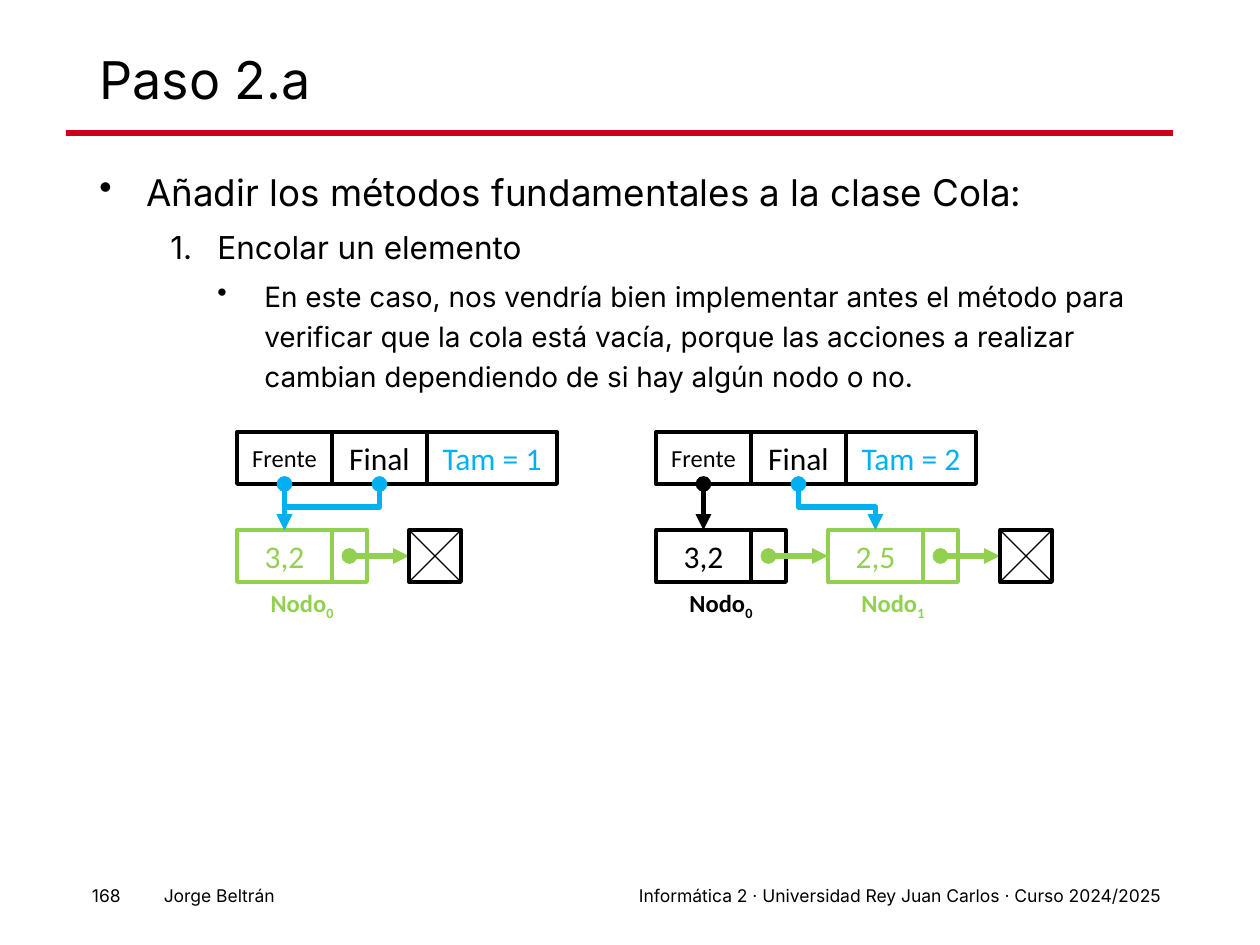
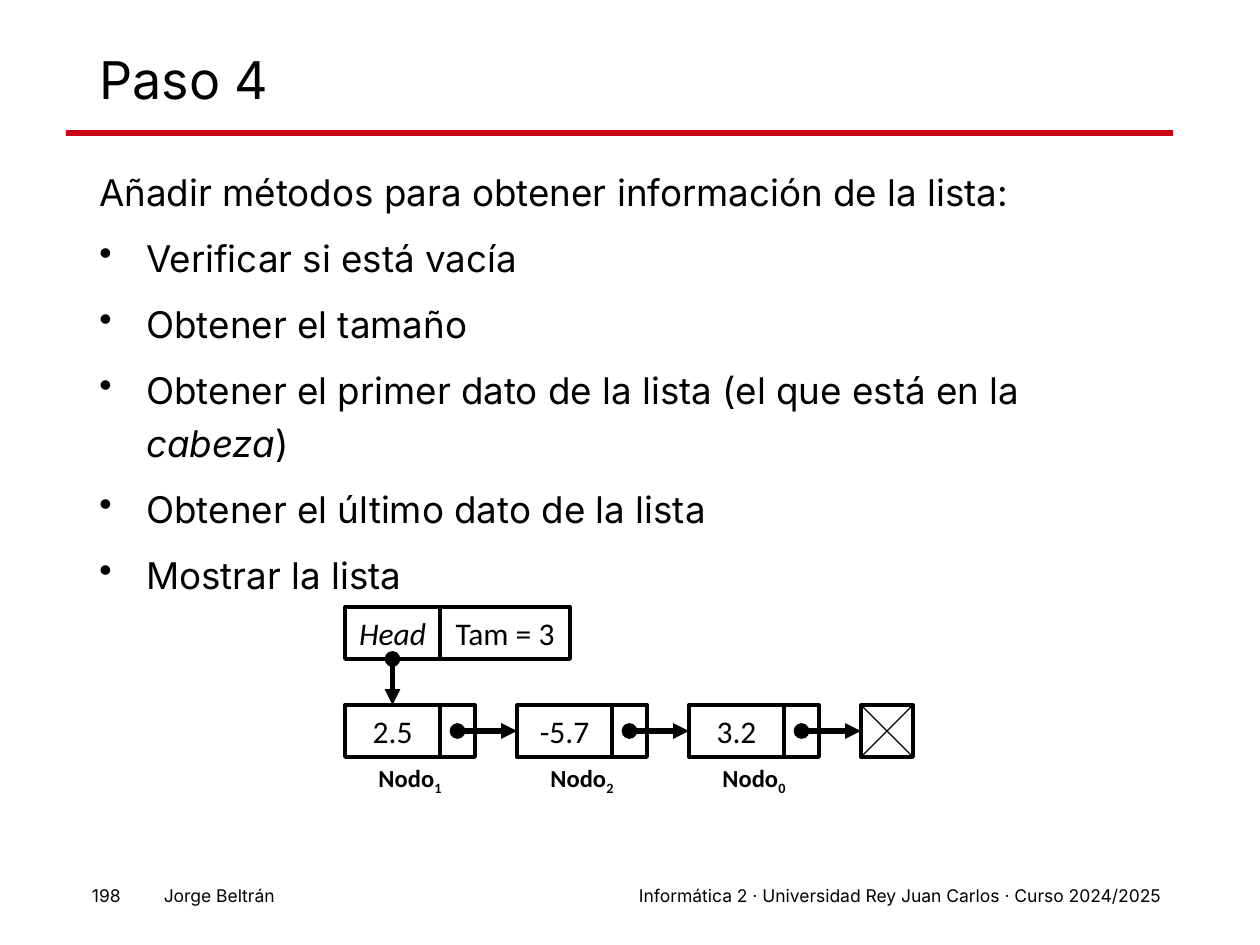
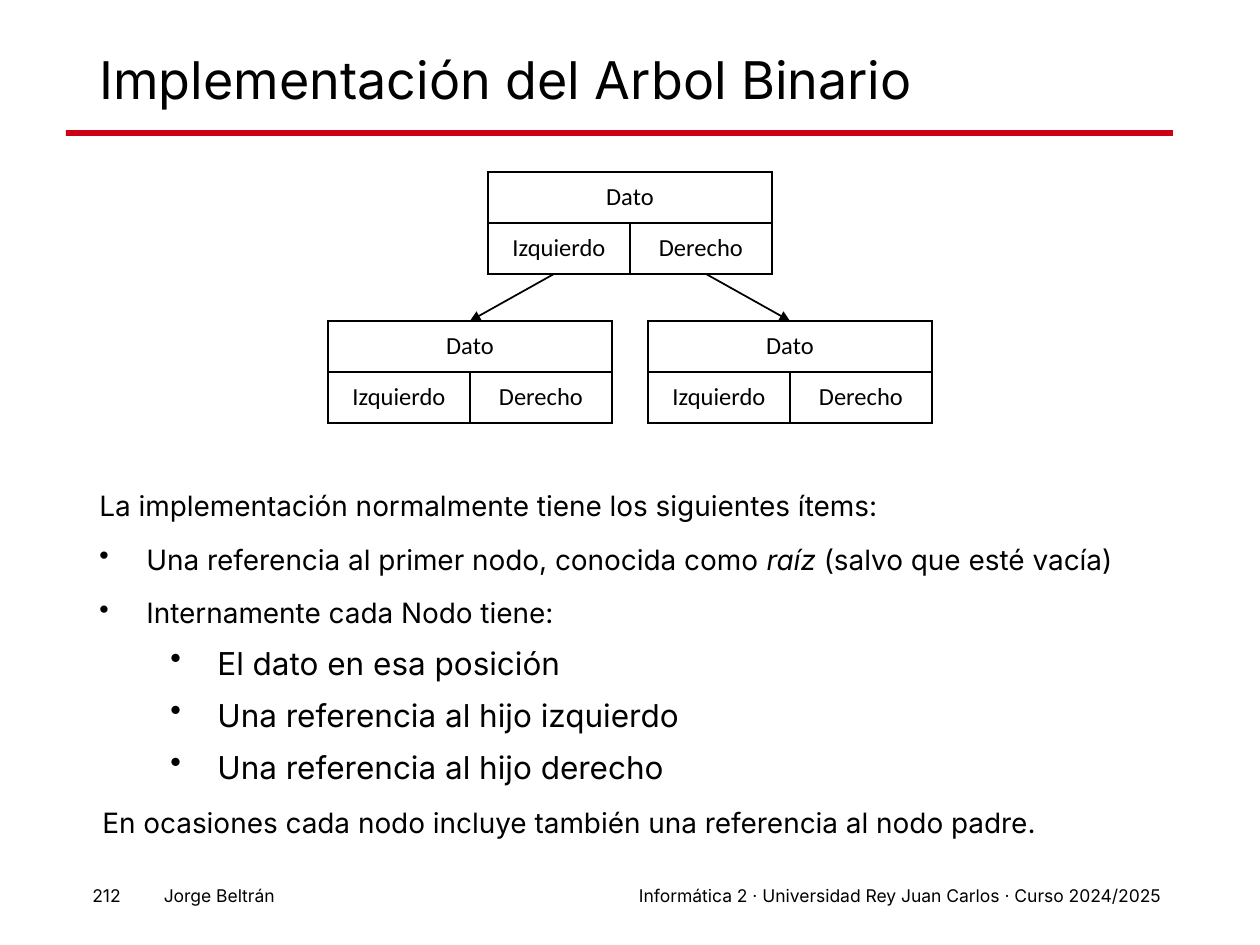
from lxml import etree
from pptx import Presentation
from pptx import util as u
from pptx.dml.color import RGBColor
from pptx.enum import shapes, text
from pptx.oxml.ns import qn

PX = 914400 / 126
COLORS = {"ink": "000000", "band": "CB0017", "new": "92D050", "changed": "00B0F0"}
AUTHOR = "Jorge Beltrán"
COURSE = "Informática 2 · Universidad Rey Juan Carlos · Curso 2024/2025"

# Font formats
TITLE = {"name": "Inter", "size": u.Pt(29.7)}
BODY = {"name": "Inter", "size": u.Pt(21)}
FOOTER = {"name": "Inter", "size": u.Pt(10)}
CELL = {"name": "Calibri", "size": u.Pt(18)}
SMALL = {"name": "Calibri", "size": u.Pt(14)}
LABEL = {**SMALL, "bold": True}
SIZE_18, SIZE_16 = {"size": u.Pt(18)}, {"size": u.Pt(16)}
ITALIC = {"italic": True}

# Body levels: left margin and hanging indent in px, space before in points
LEVELS = {
    "plain": (0, 0, 7.5),
    "closing": (0, 3, 7.5),
    "first": (47, -47, 7.5),
    "second": (118, -47, 3.8),
    "third": (165, -47, 3.8),
}

# Linked list measures in px
FIELD_W, LINK_W, FIELD_H = 95, 35, 52
NODE_W = FIELD_W + LINK_W
NODE_STEP = 172
NODE_DROP = 98

# Tree measures in px
TREE_COL, TREE_ROW = 142, 51
TREE_CENTER, ROOT_TOP, CHILD_TOP = 630, 172, 321
CHILD_OFFSET, BRANCH_OFFSET = 160, 76


def px(n):
    return u.Emu(round(n * PX))


def rgb(color):
    return RGBColor.from_string(COLORS[color])


def sub(parent, tag, **attributes):
    return etree.SubElement(parent, qn(tag), attributes)


class Deck:
    def __init__(self):
        self.prs = Presentation()
        self.prs.slide_width, self.prs.slide_height = px(1260), px(945)
        self.slide = None

    def new_slide(self, title, number):
        self.slide = self.prs.slides.add_slide(self.prs.slide_layouts[6])
        band = self.rect(66, 130, 1107, 6)
        band.fill.solid()
        band.fill.fore_color.rgb = rgb("band")
        band.line.fill.background()
        for x, w, words in ((302, 871, COURSE), (26, 261, AUTHOR), (73, 60, number)):
            self.textbox(x, 879, w, 34, words, FOOTER, align="RIGHT")
        heading = self.textbox(87, 50, 1086, 66, title, TITLE)
        heading.vertical_anchor = text.MSO_ANCHOR.MIDDLE
        heading.paragraphs[0].line_spacing = 0.9

    def add_runs(self, paragraph, runs, style, color="ink"):
        """Fill a paragraph with strings or (string, format) pairs."""
        for item in [runs] if isinstance(runs, str) else runs:
            words, extra = (item, {}) if isinstance(item, str) else item
            run = paragraph.add_run()
            run.text = words
            for key, value in {**style, **extra}.items():
                setattr(run.font, key, value)
            run.font.color.rgb = rgb(color)

    def textbox(self, x, y, w, h, runs, style, color="ink", align="LEFT"):
        frame = self.slide.shapes.add_textbox(px(x), px(y), px(w), px(h)).text_frame
        frame.word_wrap = True
        frame.paragraphs[0].alignment = text.PP_ALIGN[align]
        self.add_runs(frame.paragraphs[0], runs, style, color)
        return frame

    def body(self, y, h, items):
        """Lay out (level, bullet, runs, format) items as body paragraphs."""
        frame = self.textbox(87, y, 1086, h, [], BODY)
        for i, (level, bullet, runs, extra) in enumerate(items):
            paragraph = frame.add_paragraph() if i else frame.paragraphs[0]
            margin, indent, before = LEVELS[level]
            paragraph.line_spacing = 1.2
            paragraph.space_before = u.Pt(before)
            props = paragraph._p.get_or_add_pPr()
            props.set("marL", str(px(margin)))
            props.set("indent", str(px(indent)))
            if bullet == "1.":
                sub(props, "a:buAutoNum", type="arabicPeriod")
            elif bullet:
                sub(props, "a:buChar", char=bullet)
            self.add_runs(paragraph, runs, {**BODY, **extra})

    def rect(self, x, y, w, h):
        shape = self.slide.shapes.add_shape(
            shapes.MSO_SHAPE.RECTANGLE, px(x), px(y), px(w), px(h))
        shape.shadow.inherit = False
        return shape

    def field(self, x, y, w, runs="", style=CELL, color="ink", border="ink"):
        box = self.rect(x, y, w, FIELD_H)
        box.fill.background()
        box.line.color.rgb = rgb(border)
        box.line.width = u.Pt(2.25)
        frame = box.text_frame
        frame.margin_left = frame.margin_right = 0
        frame.vertical_anchor = text.MSO_ANCHOR.MIDDLE
        if runs:
            frame.paragraphs[0].alignment = text.PP_ALIGN.CENTER
            self.add_runs(frame.paragraphs[0], runs, style, color)

    def line(self, x1, y1, x2, y2, color="ink", width=3, head=None, tail=None, bent=False):
        kind = shapes.MSO_CONNECTOR.ELBOW if bent else shapes.MSO_CONNECTOR.STRAIGHT
        connector = self.slide.shapes.add_connector(kind, px(x1), px(y1), px(x2), px(y2))
        connector.line.color.rgb = rgb(color)
        connector.line.width = u.Pt(width)
        props = connector._element.spPr
        for tag, end in (("a:headEnd", head), ("a:tailEnd", tail)):
            if end:
                sub(props.find(qn("a:ln")), tag, type=end)
        sub(props, "a:effectLst")
        return connector

    def pointer(self, x1, y1, x2, y2, color="ink"):
        self.line(x1, y1, x2, y2, color, head="oval", tail="triangle")

    def bent_pointer(self, x1, y1, x2, y2, color):
        """Elbow that leaves downwards: a sideways elbow turned a quarter."""
        w, h = y2 - y1, abs(x2 - x1)
        left, top = (x1 + x2 - w) / 2, (y1 + y2 - h) / 2
        elbow = self.line(left, top, left + w, top + h, color,
                          head="oval", tail="triangle", bent=True)
        frame = elbow._element.spPr.find(qn("a:xfrm"))
        frame.set("rot", "16200000" if x2 > x1 else "5400000")
        if x2 > x1:
            frame.set("flipH", "1")

    def node(self, x, y, value, index, color="ink", link="ink"):
        self.field(x, y, FIELD_W, value, color=color, border=color)
        self.field(x + FIELD_W, y, LINK_W, border=color)
        middle = y + FIELD_H / 2
        self.pointer(x + FIELD_W + LINK_W / 2, middle, x + NODE_STEP, middle, link)
        label = self.textbox(x, y + FIELD_H, NODE_W, 43, ["Nodo", index],
                             LABEL, color, align="CENTER")
        label.paragraphs[0].runs[1]._r.get_or_add_rPr().set("baseline", "-25000")

    def linked_list(self, x, y, fields, size, size_color, nodes, head_color):
        """Header fields, the node chain below them and the closing null box."""
        for i, (name, style) in enumerate(fields):
            self.field(x + i * FIELD_W, y, FIELD_W, name, style)
        self.field(x + len(fields) * FIELD_W, y, NODE_W, size, color=size_color)
        row = y + NODE_DROP
        for i, node in enumerate(nodes):
            self.node(x + i * NODE_STEP, row, *node)
        null_x = x + len(nodes) * NODE_STEP
        self.field(null_x, row, FIELD_H)
        for start, end in ((row, row + FIELD_H), (row + FIELD_H, row)):
            self.line(null_x, start, null_x + FIELD_H, end, width=0.75)
        center = x + FIELD_W / 2
        self.pointer(center, y + FIELD_H, center, row, head_color)
        if len(fields) > 1:
            last = center + (len(nodes) - 1) * NODE_STEP
            self.bent_pointer(center + FIELD_W, y + FIELD_H, last, row, "changed")

    def tree_node(self, center, y):
        table = self.slide.shapes.add_table(
            2, 2, px(center - TREE_COL), px(y), px(2 * TREE_COL), px(2 * TREE_ROW)).table
        table.first_row = table.horz_banding = False
        for column in table.columns:
            column.width = px(TREE_COL)
        for row in table.rows:
            row.height = px(TREE_ROW)
        table.cell(0, 0).merge(table.cell(0, 1))
        for r, names in enumerate((("Dato", ""), ("Izquierdo", "Derecho"))):
            for c, name in enumerate(names):
                self.tree_cell(table.cell(r, c), name)

    def tree_cell(self, cell, name):
        cell.vertical_anchor = text.MSO_ANCHOR.MIDDLE
        props = cell._tc.get_or_add_tcPr()
        for side in "LRTB":
            border = sub(props, f"a:ln{side}", w=str(u.Pt(1)))
            sub(sub(border, "a:solidFill"), "a:srgbClr", val=COLORS["ink"])
        cell.fill.background()
        if name:
            paragraph = cell.text_frame.paragraphs[0]
            paragraph.alignment = text.PP_ALIGN.CENTER
            self.add_runs(paragraph, name, SMALL)


def queue_slide(deck):
    deck.new_slide("Paso 2.a", "168")
    deck.body(155, 696, [
        ("first", "•", "Añadir los métodos fundamentales a la clase Cola:", {}),
        ("second", "1.", "Encolar un elemento", SIZE_18),
        ("third", "•", "En este caso, nos vendría bien implementar antes el método "
         "para verificar que la cola está vacía, porque las acciones a realizar "
         "cambian dependiendo de si hay algún nodo o no.", SIZE_16),
    ])
    ends = [("Frente", SMALL), ("Final", CELL)]
    # Queue with its first node, then with a second one
    deck.linked_list(237, 432, ends, "Tam = 1", "changed",
                     [("3,2", "0", "new", "new")], "changed")
    deck.linked_list(656, 432, ends, "Tam = 2", "changed",
                     [("3,2", "0", "ink", "new"), ("2,5", "1", "new", "new")], "ink")


def list_slide(deck):
    deck.new_slide("Paso 4", "198")
    tasks = [
        "Verificar si está vacía",
        "Obtener el tamaño",
        ["Obtener el primer dato de la lista (el que está en la ", ("cabeza", ITALIC), ")"],
        "Obtener el último dato de la lista",
        "Mostrar la lista",
    ]
    intro = ("plain", "", "Añadir métodos para obtener información de la lista:", {})
    deck.body(155, 696, [intro] + [("first", "•", task, {}) for task in tasks])
    deck.linked_list(345, 607, [("Head", {**CELL, **ITALIC})], "Tam = 3", "ink",
                     [("2.5", "1"), ("-5.7", "2"), ("3.2", "0")], "ink")


def tree_slide(deck):
    deck.new_slide("Implementación del Arbol Binario", "212")
    parts = ["El dato en esa posición", "Una referencia al hijo izquierdo",
             "Una referencia al hijo derecho"]
    deck.body(476, 370, [
        ("plain", "", "La implementación normalmente tiene los siguientes ítems:", SIZE_16),
        ("first", "•", ["Una referencia al primer nodo, conocida como ",
                        ("raíz ", ITALIC), "(salvo que esté vacía)"], SIZE_16),
        ("first", "•", "Internamente cada Nodo tiene:", SIZE_16),
        *[("second", "•", part, SIZE_18) for part in parts],
        ("closing", "", "En ocasiones cada nodo incluye también una referencia "
         "al nodo padre.", SIZE_16),
    ])
    # Root, both children and the branches between them
    deck.tree_node(TREE_CENTER, ROOT_TOP)
    for side in (-1, 1):
        child = TREE_CENTER + side * CHILD_OFFSET
        deck.tree_node(child, CHILD_TOP)
        deck.line(TREE_CENTER + side * BRANCH_OFFSET, ROOT_TOP + 2 * TREE_ROW,
                  child, CHILD_TOP, width=1, tail="triangle")


def main():
    deck = Deck()
    for build in (queue_slide, list_slide, tree_slide):
        build(deck)
    deck.prs.save("out.pptx")


if __name__ == "__main__":
    main()
